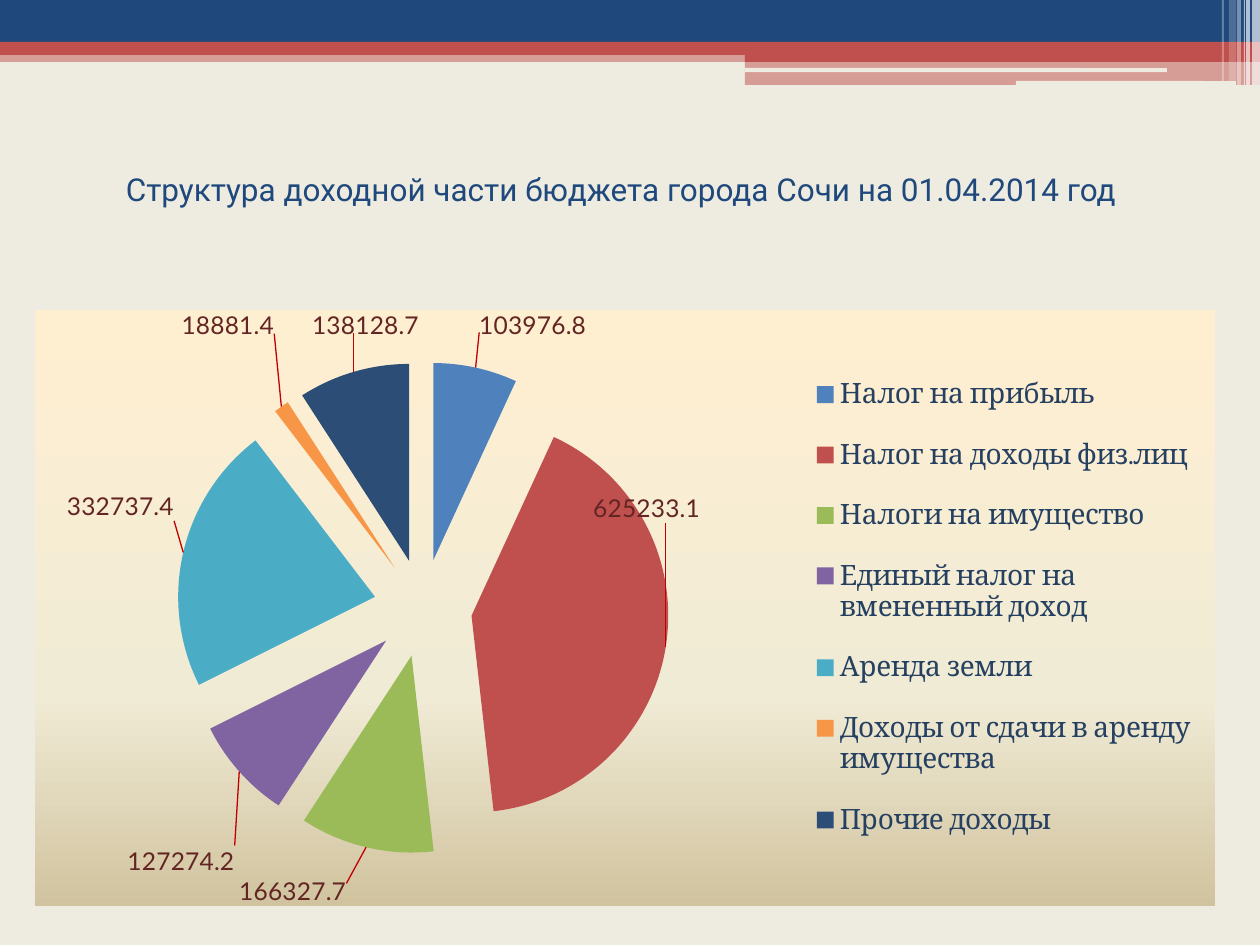
from pptx import Presentation
from pptx.chart.data import CategoryChartData
from pptx.dml.color import RGBColor
from pptx.enum.chart import XL_CHART_TYPE, XL_LABEL_POSITION, XL_LEGEND_POSITION
from pptx.enum.shapes import MSO_SHAPE
from pptx.enum.text import MSO_ANCHOR, PP_ALIGN
from pptx.oxml import parse_xml
from pptx.oxml.ns import nsdecls, qn
from pptx.util import Pt

NAVY = RGBColor(0x1F, 0x49, 0x7D)
RED = RGBColor(0xC0, 0x50, 0x4D)
CREAM = RGBColor(0xEE, 0xEC, 0xE1)
WHITE = RGBColor(0xFF, 0xFF, 0xFF)
MAROON = RGBColor(0x63, 0x25, 0x23)
LEGEND_BLUE = RGBColor(0x25, 0x40, 0x61)
GREEN = RGBColor(0x9B, 0xBB, 0x59)
PURPLE = RGBColor(0x80, 0x64, 0xA2)
BLUE = RGBColor(0x4F, 0x81, 0xBD)
TEAL = RGBColor(0x4B, 0xAC, 0xC6)
ORANGE = RGBColor(0xF7, 0x96, 0x46)
DARK_BLUE = RGBColor(0x2C, 0x4D, 0x75)
LEADER_RED = RGBColor(0xC0, 0x00, 0x00)
BACKDROP = [(0, RGBColor(0xFF, 0xEF, 0xD1)), (65, RGBColor(0xF0, 0xEB, 0xD5)),
            (100, RGBColor(0xD1, 0xC3, 0x9F))]

TITLE_FONT = {"name": "Roboto", "size": Pt(18), "color": NAVY}
CHART_FONT = {"name": "Cambria", "size": Pt(18)}
LEGEND_FONT = {"name": "Cambria", "size": Pt(16), "color": LEGEND_BLUE}
LABEL_FONT = {"name": "Lato", "size": Pt(14), "color": MAROON}

BANDS = [
    ((0, 50, 1260, 12), RED, 50),
    ((0, 0, 1260, 43), NAVY, 100),
    ((0, 42, 1260, 13), RED, 100),
    ((745, 49, 515, 13), RED, 100),
    ((745, 60, 515, 25), RED, 50),
]
SLOTS = [(745, 68, 422, 4), (1016, 81, 220, 5)]
STRIPES = [(1252, 8, 85, 65), (1246, 4, 85, 65), (1244, 1, 85, 60),
           (1237, 4, 85, 40), (1229, 7, 81, 20), (1222, 2, 81, 30)]

INCOME = [
    ("Налог на прибыль", 103976.8, BLUE, (2, -28)),
    ("Налог на доходы физ.лиц", 625233.1, RED, (-80, -156)),
    ("Налоги на имущество", 166327.7, GREEN, (-18, 29)),
    ("Единый налог на вмененный доход", 127274.2, PURPLE, (1, 69)),
    ("Аренда земли", 332737.4, TEAL, (-2, -30)),
    ("Доходы от сдачи в аренду имущества", 18881.4, ORANGE, (-3, -67)),
    ("Прочие доходы", 138128.7, DARK_BLUE, (68, -32)),
]
CHART_BOX = (35, 310, 1180, 596)
PIE_BOX = (141, 52, 494, 492)
LEGEND_BOX = (769, 40, 400, 515)


def emu(px):
    return round(px * 914400 / 126)


def style(font, values):
    for key, value in values.items():
        if key == "color":
            font.color.rgb = value
        else:
            setattr(font, key, value)


def layout(x, y, w=None, h=None, inner=False, edge=True):
    width, height = CHART_BOX[2:]
    parts = '<c:layoutTarget val="inner"/>' if inner else ""
    if edge:
        parts += '<c:xMode val="edge"/><c:yMode val="edge"/>'
    for tag, length, whole in (("x", x, width), ("y", y, height),
                               ("w", w, width), ("h", h, height)):
        if length is not None:
            parts += f'<c:{tag} val="{length / whole:.4f}"/>'
    return parse_xml(f'<c:layout {nsdecls("c")}><c:manualLayout>{parts}'
                     '</c:manualLayout></c:layout>')


def replace_layout(parent, new, after=None):
    for old in parent.findall(qn("c:layout")):
        parent.remove(old)
    if after is None:
        parent.insert(0, new)
    else:
        parent.find(qn(after)).addnext(new)


class BudgetSlide:
    def __init__(self, deck):
        self.slide = deck.slides.add_slide(deck.slide_layouts[5])
        self.slide.background.fill.solid()
        self.slide.background.fill.fore_color.rgb = CREAM

    def bar(self, box, color, opacity=100, kind=MSO_SHAPE.RECTANGLE):
        bar = self.slide.shapes.add_shape(kind, *map(emu, box))
        bar.shadow.inherit = False
        bar.line.fill.background()
        bar.fill.solid()
        bar.fill.fore_color.rgb = color
        if opacity < 100:
            bar._element.spPr.find(".//" + qn("a:srgbClr")).append(parse_xml(
                f'<a:alpha {nsdecls("a")} val="{opacity * 1000}"/>'))

    def title(self, box, text):
        title = self.slide.shapes.title
        for side, px in zip(("left", "top", "width", "height"), box):
            setattr(title, side, emu(px))
        frame = title.text_frame
        frame.word_wrap = True
        frame.vertical_anchor = MSO_ANCHOR.MIDDLE
        paragraph = frame.paragraphs[0]
        paragraph.alignment = PP_ALIGN.CENTER
        run = paragraph.add_run()
        run.text = text
        style(run.font, TITLE_FONT)

    def pie(self, box, rows):
        data = CategoryChartData()
        data.categories = [row[0] for row in rows]
        data.add_series("Series 1", [row[1] for row in rows])
        chart = self.slide.shapes.add_chart(
            XL_CHART_TYPE.PIE, *map(emu, box), data).chart
        chart.has_title = False
        style(chart.font, CHART_FONT)
        self.backdrop(chart)
        self.legend(chart)
        plot = chart.plots[0]
        plot.vary_by_categories = True
        replace_layout(chart._chartSpace.chart.plotArea, layout(*PIE_BOX, inner=True))
        series = plot.series[0]
        series._element.find(qn("c:tx")).addnext(
            parse_xml(f'<c:explosion {nsdecls("c")} val="25"/>'))
        labels = series.data_labels
        labels.show_value = True
        labels.position = XL_LABEL_POSITION.OUTSIDE_END
        style(labels.font, LABEL_FONT)
        for index, (_, _, color, shift) in enumerate(rows):
            point = series.points[index]
            point.format.fill.solid()
            point.format.fill.fore_color.rgb = color
            label = point.data_label
            label.position = XL_LABEL_POSITION.OUTSIDE_END
            style(label.font, LABEL_FONT)
            node = labels._element.findall(qn("c:dLbl"))[index]
            replace_layout(node, layout(*shift, edge=False), "c:idx")
        self.leaders(labels._element)

    def leaders(self, labels):
        for old in labels.findall(qn("c:showLeaderLines")):
            labels.remove(old)
        labels.append(parse_xml(f'<c:showLeaderLines {nsdecls("c")} val="1"/>'))
        labels.append(parse_xml(
            f'<c:leaderLines {nsdecls("c", "a")}><c:spPr><a:ln w="9525"><a:solidFill>'
            f'<a:srgbClr val="{LEADER_RED}"/></a:solidFill></a:ln></c:spPr></c:leaderLines>'))

    def legend(self, chart):
        chart.has_legend = True
        legend = chart.legend
        legend.position = XL_LEGEND_POSITION.RIGHT
        legend.include_in_layout = False
        style(legend.font, LEGEND_FONT)
        replace_layout(legend._element, layout(*LEGEND_BOX), "c:legendPos")

    def backdrop(self, chart):
        stops = "".join(f'<a:gs pos="{at * 1000}"><a:srgbClr val="{color}"/></a:gs>'
                        for at, color in BACKDROP)
        chart._chartSpace.chart.addnext(parse_xml(
            f'<c:spPr {nsdecls("c", "a")}><a:gradFill><a:gsLst>{stops}</a:gsLst>'
            '<a:lin ang="5400000" scaled="0"/></a:gradFill>'
            '<a:ln><a:noFill/></a:ln></c:spPr>'))


def main():
    deck = Presentation()
    deck.slide_width, deck.slide_height = emu(1260), emu(945)
    page = BudgetSlide(deck)
    for box, color, opacity in BANDS:
        page.bar(box, color, opacity)
    for box in SLOTS:
        page.bar(box, CREAM, kind=MSO_SHAPE.ROUNDED_RECTANGLE)
    for left, width, height, opacity in STRIPES:
        page.bar((left, 0, width, height), WHITE, opacity)
    page.title((35, 115, 1180, 147),
               "Структура доходной части бюджета города Сочи на 01.04.2014 год ")
    page.pie(CHART_BOX, INCOME)
    deck.save("out.pptx")


if __name__ == "__main__":
    main()
